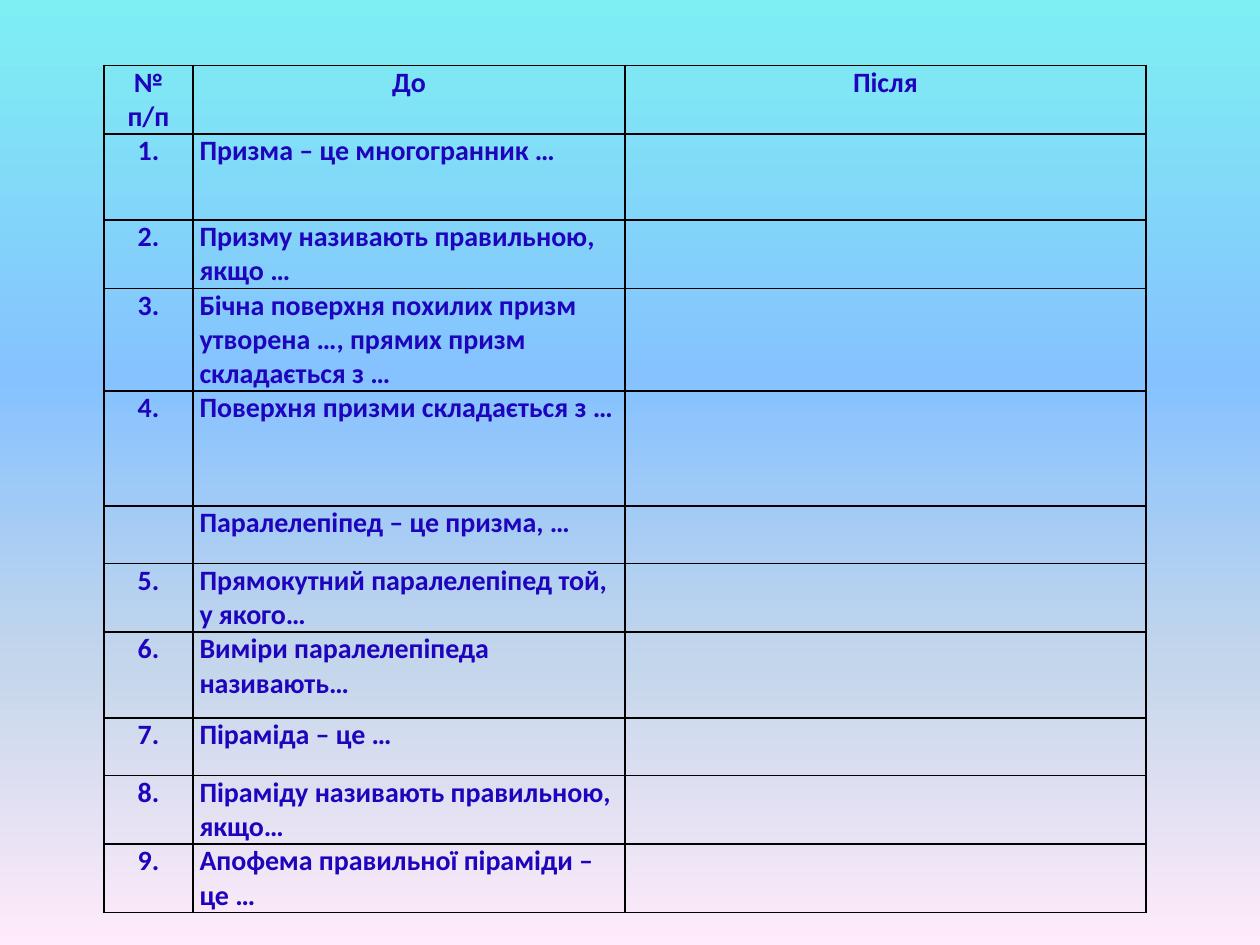
import pptx
import pptx.dml.color
import pptx.enum.text
import pptx.oxml
import pptx.oxml.ns
import pptx.util
from dataclasses import dataclass
from lxml import etree

PIXELS_PER_INCH = 252


@dataclass(frozen=True)
class Theme:
    font: str = "Calibri"
    text_size: int = 16
    text: str = "1E04BC"
    border: str = "000000"
    border_width: int = 1
    # Background stops from top to bottom: percent, colour
    background: tuple = ((0, "7EEFF2"), (40, "85C2FF"), (70, "C4D6EB"), (100, "FFEBFA"))


THEME = Theme()

# Table geometry in px
TABLE_LEFT, TABLE_TOP, TABLE_HEIGHT = 208, 131, 1676
COLUMN_WIDTHS = (178, 864, 1042)
ROW_HEIGHTS = {2: 115, 3: 172, 4: 230}  # by number of lines reserved
ROW_LINES = (2, 3, 2, 3, 4, 2, 2, 3, 2, 2, 2)
CELL_INSET = 13

HEADINGS = ("№ п/п", "До", "Після")
STATEMENTS = (
    ("1.", "Призма – це многогранник …"),
    ("2.", "Призму називають правильною, якщо …"),
    ("3.", "Бічна поверхня похилих призм утворена …, прямих призм складається з …"),
    ("4.", "Поверхня призми складається з …"),
    ("", "Паралелепіпед – це призма, …"),
    ("5.", "Прямокутний паралелепіпед той, у якого…"),
    ("6.", "Виміри паралелепіпеда називають…"),
    ("7.", "Піраміда – це …"),
    ("8.", "Піраміду називають правильною, якщо…"),
    ("9.", "Апофема правильної піраміди – це …"),
)


def px(length):
    return pptx.util.Emu(round(length * 914400 / PIXELS_PER_INCH))


def add_child(parent, tag, **attributes):
    return etree.SubElement(parent, pptx.oxml.ns.qn(tag), **attributes)


def paint_background(slide):
    fill = slide.background.fill
    fill.gradient()
    fill.gradient_angle = 270
    stops = slide.element.find(".//" + pptx.oxml.ns.qn("a:gsLst"))
    for stop in list(stops):
        stops.remove(stop)
    for percent, color in THEME.background:
        stop = add_child(stops, "a:gs", pos=str(percent * 1000))
        add_child(stop, "a:srgbClr", val=color)


def add_borders(cell):
    properties = cell._tc.get_or_add_tcPr()
    width = str(pptx.util.Pt(THEME.border_width))
    for side in ("a:lnL", "a:lnR", "a:lnT", "a:lnB"):
        line = add_child(properties, side, w=width)
        fill = add_child(line, "a:solidFill")
        add_child(fill, "a:srgbClr", val=THEME.border)


def style_font(font):
    font.name = THEME.font
    font.size = pptx.util.Pt(THEME.text_size)
    font.bold = True
    font.color.rgb = pptx.dml.color.RGBColor.from_string(THEME.text)


def fill_cell(cell, text, centered):
    cell.margin_left = cell.margin_right = px(CELL_INSET)
    cell.margin_top = cell.margin_bottom = 0
    add_borders(cell)
    cell.fill.background()
    paragraph = cell.text_frame.paragraphs[0]
    if centered:
        paragraph.alignment = pptx.enum.text.PP_ALIGN.CENTER
    if text:
        run = paragraph.add_run()
        run.text = text
        style_font(run.font)


def add_statement_table(slide):
    rows = [HEADINGS] + [(number, statement, "") for number, statement in STATEMENTS]
    shape = slide.shapes.add_table(
        len(rows), len(HEADINGS), px(TABLE_LEFT), px(TABLE_TOP),
        px(sum(COLUMN_WIDTHS)), px(TABLE_HEIGHT))
    table = shape.table
    table.first_row = table.horz_banding = False
    for column, width in zip(table.columns, COLUMN_WIDTHS):
        column.width = px(width)
    for row, lines in zip(table.rows, ROW_LINES):
        row.height = px(ROW_HEIGHTS[lines])
    shape.height = px(TABLE_HEIGHT)

    # The heading row and the number column are centred
    for row_index, texts in enumerate(rows):
        for column_index, text in enumerate(texts):
            centered = row_index == 0 or column_index == 0
            fill_cell(table.cell(row_index, column_index), text, centered)


def main():
    presentation = pptx.Presentation()
    presentation.slide_width = px(2520)
    presentation.slide_height = px(1890)
    slide = presentation.slides.add_slide(presentation.slide_layouts[6])
    paint_background(slide)
    add_statement_table(slide)
    presentation.save("out.pptx")


if __name__ == "__main__":
    main()
